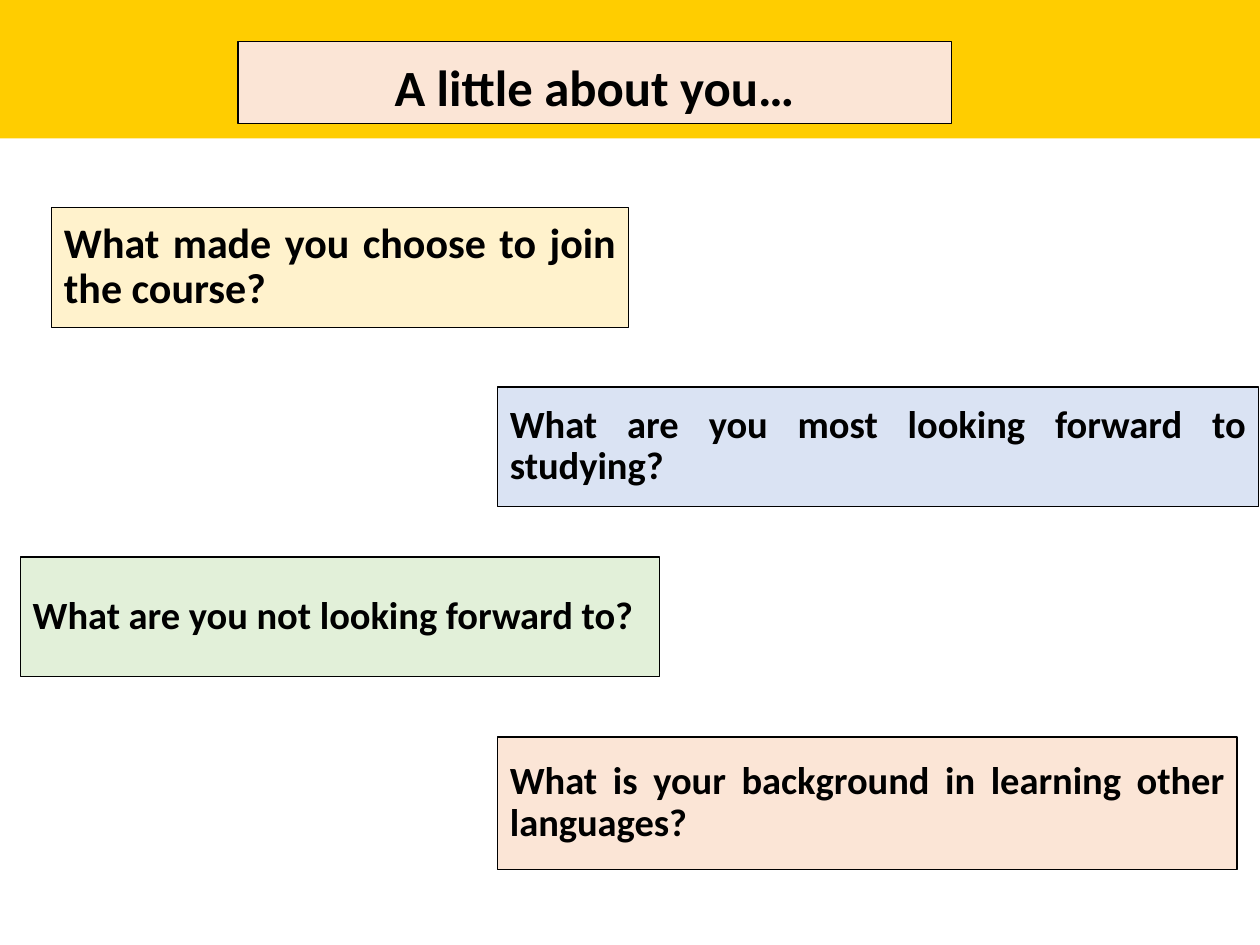
from dataclasses import dataclass

from pptx import Presentation
from pptx.dml.color import RGBColor
from pptx.enum.shapes import MSO_SHAPE
from pptx.enum.text import MSO_ANCHOR, PP_ALIGN
from pptx.shapes.autoshape import Shape
from pptx.slide import Slide
from pptx.util import Cm, Pt

BLACK = RGBColor(0x00, 0x00, 0x00)
GOLD = RGBColor(0xFF, 0xCD, 0x00)
PEACH = RGBColor(0xFB, 0xE5, 0xD6)
CREAM = RGBColor(0xFF, 0xF2, 0xCC)
BLUE = RGBColor(0xDA, 0xE3, 0xF3)
GREEN = RGBColor(0xE2, 0xF0, 0xD9)


@dataclass
class Card:
    text: str
    left: float
    top: float
    width: float
    height: float
    fill: RGBColor
    size: int = 22
    align: PP_ALIGN = PP_ALIGN.JUSTIFY
    anchor: MSO_ANCHOR = MSO_ANCHOR.MIDDLE


CARDS = [
    Card("A little about you…", 4.8, 0.84, 14.38, 1.65, PEACH, 29,
         PP_ALIGN.CENTER, MSO_ANCHOR.BOTTOM),
    Card("What made you choose to join the course?",
         1.04, 4.19, 11.63, 2.41, CREAM, 24),
    Card("What are you most looking forward to studying?",
         10.03, 7.8, 15.34, 2.41, BLUE),
    Card("What are you not looking forward to?",
         0.41, 11.23, 12.88, 2.41, GREEN),
    Card("What is your background in learning other languages?",
         10.03, 14.86, 14.91, 2.67, PEACH),
]


def add_box(slide: Slide, left: float, top: float, width: float,
            height: float, fill: RGBColor) -> Shape:
    box = slide.shapes.add_shape(
        MSO_SHAPE.RECTANGLE, Cm(left), Cm(top), Cm(width), Cm(height))
    box.shadow.inherit = False
    box.fill.solid()
    box.fill.fore_color.rgb = fill
    box.line.fill.background()
    return box


def add_card(slide: Slide, card: Card) -> None:
    box = add_box(slide, card.left, card.top, card.width, card.height, card.fill)
    box.line.color.rgb = BLACK
    box.line.width = Pt(0.75)
    frame = box.text_frame
    frame.word_wrap = True
    frame.vertical_anchor = card.anchor
    para = frame.paragraphs[0]
    para.text = card.text
    para.alignment = card.align
    para.line_spacing = 0.9
    font = para.font
    font.name = "Calibri"
    font.size = Pt(card.size)
    font.bold = True
    font.color.rgb = BLACK


def main() -> None:
    deck = Presentation()
    deck.slide_width = Cm(25.4)
    deck.slide_height = Cm(19.05)
    slide = deck.slides.add_slide(deck.slide_layouts[6])
    add_box(slide, 0, 0, 25.4, 2.79, GOLD)
    for card in CARDS:
        add_card(slide, card)
    deck.save("out.pptx")


if __name__ == "__main__":
    main()
